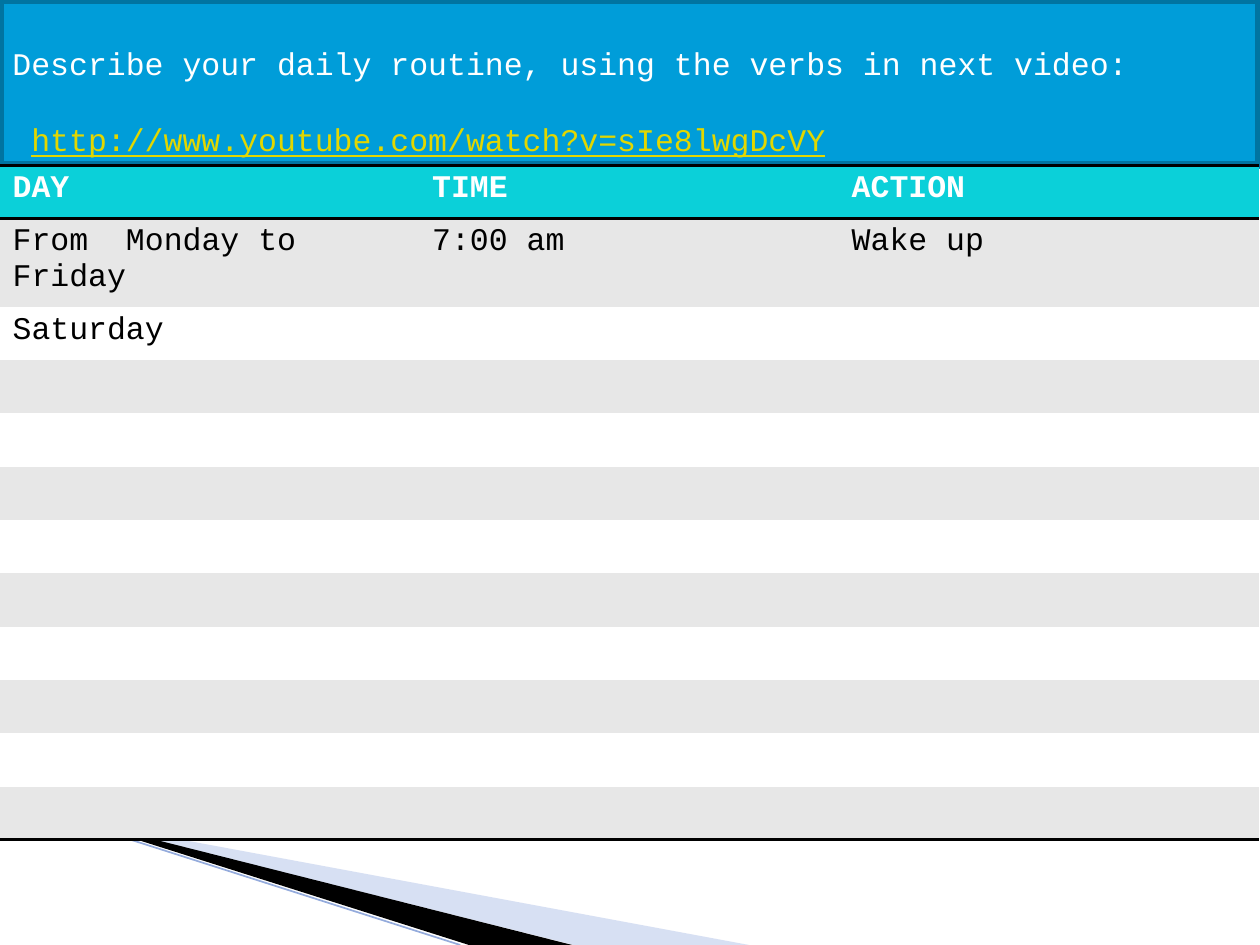
"""Build a daily routine slide with a banner and a timetable."""
from dataclasses import dataclass

from lxml import etree
from pptx import Presentation
from pptx.dml.color import RGBColor
from pptx.enum.shapes import MSO_CONNECTOR, MSO_SHAPE
from pptx.enum.text import MSO_ANCHOR, MSO_AUTO_SIZE, PP_ALIGN
from pptx.oxml import parse_xml
from pptx.oxml.ns import qn
from pptx.util import Pt

STRAIGHT = MSO_CONNECTOR.STRAIGHT
RECT = MSO_SHAPE.RECTANGLE
TOP = MSO_ANCHOR.TOP
GROW = MSO_AUTO_SIZE.SHAPE_TO_FIT_TEXT
JUSTIFY = PP_ALIGN.JUSTIFY

NS = "http://schemas.openxmlformats.org/drawingml/2006/main"
PLAIN = "{2D5ABB26-0587-4C30-8999-92F81FD0307C}"
WHITE, BLACK, GREY = "FFFFFF", "000000", "E7E7E7"
BASE = {"name": "Courier New", "size": Pt(18), "bold": False}
WIDTH, SPLIT = 719.28, 94.3
ROWS, ROW = 12, 30.48
TEXTS = [
    ["DAY", "TIME", "ACTION"],
    ["From  Monday to Friday", "7:00 am", "Wake up"],
    ["Saturday"],
]


@dataclass
class Wedge:
    points: list[tuple[float, float]]
    fill: str
    alpha: int = 100


WEDGES = [
    Wedge([(39.6, 468), (428, 540), (328, 540)], "9DB2E1", 40),
    Wedge([(38.4, 467.4), (327, 540), (267.5, 540)], BLACK),
]


def color(form, code: str) -> None:
    """Give a fill, line fill or font fill one solid colour."""
    form.solid()
    form.fore_color.rgb = RGBColor.from_string(code)


def style(font, code: str, **extra) -> None:
    """Apply the base font values, any extra ones and a colour."""
    for key, value in {**BASE, **extra}.items():
        setattr(font, key, value)
    color(font.fill, code)


def draw_wedge(shapes, wedge: Wedge) -> None:
    """Draw one closed wedge at the foot of the slide."""
    build = shapes.build_freeform(*wedge.points[0], scale=Pt(1))
    build.add_line_segments(wedge.points[1:])
    shape = build.convert_to_shape()
    shape.shadow.inherit = False
    shape.line.fill.background()
    color(shape.fill, wedge.fill)
    if wedge.alpha < 100:
        tone = next(shape._element.spPr.iter(qn("a:srgbClr")))
        etree.SubElement(tone, qn("a:alpha"), val=str(wedge.alpha * 1000))


def draw_edge(shapes) -> None:
    """Draw the thin line along the black wedge."""
    edge = shapes.add_connector(STRAIGHT, Pt(0), Pt(456), Pt(263), Pt(540))
    color(edge.line.fill, "94ABDC")
    edge.line.width = Pt(0.95)
    etree.SubElement(edge._element.spPr, qn("a:effectLst"))


def draw_banner(shapes) -> None:
    """Draw the blue banner with the task and the video address."""
    box = shapes.add_shape(RECT, Pt(0), Pt(0), Pt(WIDTH), Pt(SPLIT))
    box.shadow.inherit = False
    color(box.fill, "009DD9")
    color(box.line.fill, "0074A1")
    box.line.width = Pt(4.33)
    frame = box.text_frame
    frame.word_wrap, frame.auto_size = True, GROW
    frame.vertical_anchor = TOP
    task, link = frame.paragraphs[0], frame.add_paragraph()
    for para in (task, link):
        para.alignment, para.line_spacing = JUSTIFY, 2.0
    parts = [
        (task, "Describe your daily routine, using the verbs in next video:", WHITE, False),
        (link, " ", WHITE, False),
        (link, "http://www.youtube.com/watch?v=sIe8lwgDcVY", "E2D700", True),
    ]
    for para, text, code, under in parts:
        run = para.add_run()
        run.text = text
        style(run.font, code, underline=under)


def rule(cell, sides: str) -> None:
    """Add black borders on the given sides of a cell."""
    props = cell._tc.get_or_add_tcPr()
    for place, side in enumerate(sides):
        props.insert(place, parse_xml(
            f'<a:ln{side} xmlns:a="{NS}" w="{Pt(2)}"><a:solidFill>'
            f'<a:srgbClr val="{BLACK}"/></a:solidFill></a:ln{side}>'))


def draw_table(shapes) -> None:
    """Draw the timetable with its header and grey bands."""
    frame = shapes.add_table(ROWS, 3, Pt(0), Pt(SPLIT), Pt(WIDTH), Pt(ROWS * ROW))
    table = frame.table
    table.first_row = table.horz_banding = False
    table._tbl.tblPr.find(qn("a:tableStyleId")).text = PLAIN
    for col in table.columns:
        col.width = Pt(WIDTH / 3)
    for r, row in enumerate(table.rows):
        row.height = Pt(ROW)
        head = r == 0
        band = "0BD0D9" if head else GREY if r % 2 else WHITE
        sides = {0: "TB", ROWS - 1: "B"}.get(r, "")
        for cell in row.cells:
            rule(cell, sides)
            color(cell.fill, band)
        texts = TEXTS[r] if r < len(TEXTS) else []
        for cell, text in zip(row.cells, texts):
            run = cell.text_frame.paragraphs[0].add_run()
            run.text = text
            style(run.font, WHITE if head else BLACK, bold=head)


def main() -> None:
    """Build and save the slide."""
    deck = Presentation()
    deck.slide_width, deck.slide_height = Pt(720), Pt(540)
    slide = deck.slides.add_slide(deck.slide_layouts[6])
    color(slide.background.fill, WHITE)
    for wedge in WEDGES:
        draw_wedge(slide.shapes, wedge)
    draw_edge(slide.shapes)
    draw_banner(slide.shapes)
    draw_table(slide.shapes)
    deck.save("out.pptx")


if __name__ == "__main__":
    main()
